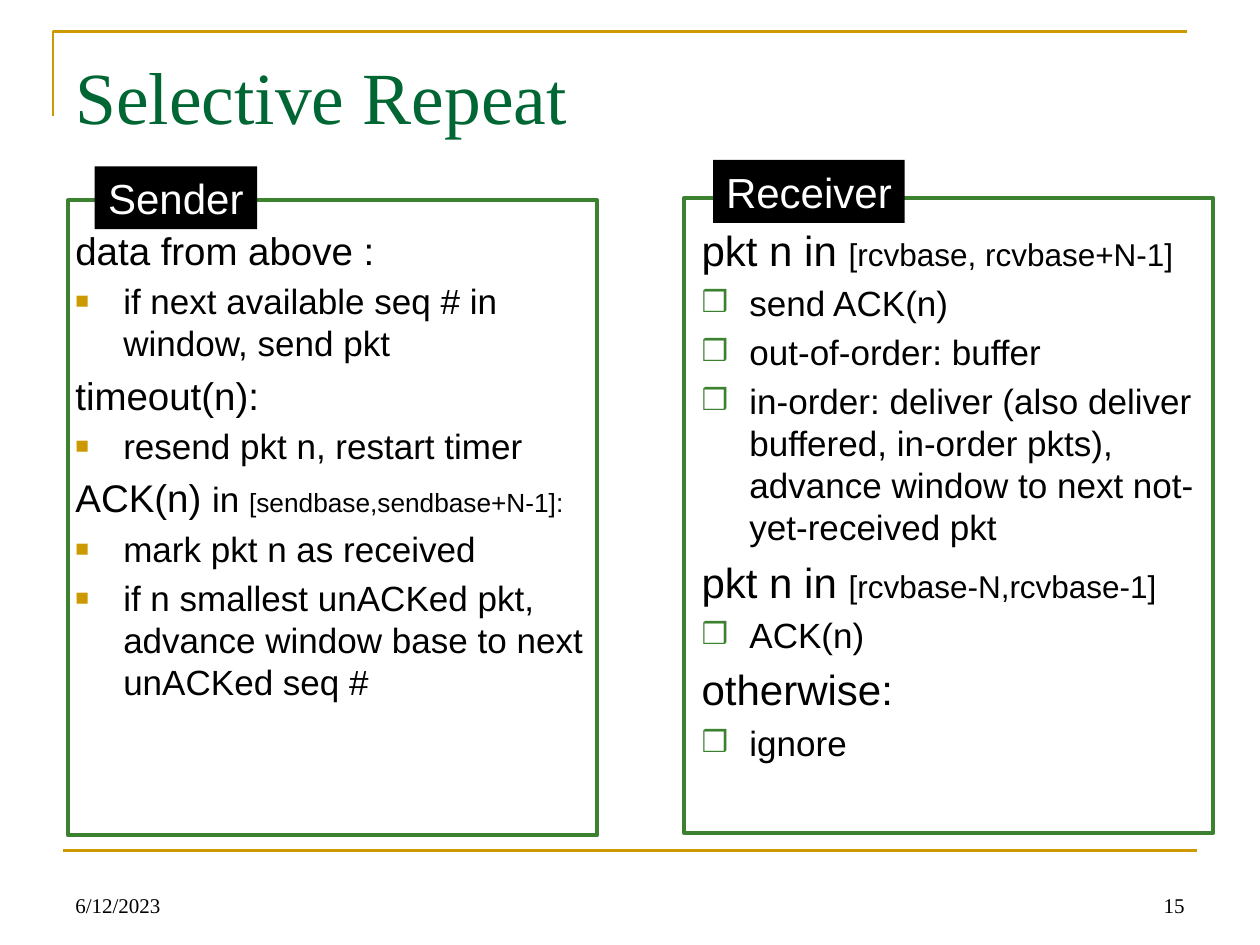
"""Build the Selective Repeat slide comparing sender and receiver rules."""
from dataclasses import dataclass

import pptx
import pptx.dml.color
import pptx.enum.shapes
import pptx.enum.text
import pptx.oxml
import pptx.oxml.ns
import pptx.util
from lxml import etree

Inches = pptx.util.Inches
Align = pptx.enum.text.PP_ALIGN
Anchor = pptx.enum.text.MSO_ANCHOR
Kind = pptx.enum.shapes.MSO_SHAPE
qn = pptx.oxml.ns.qn


@dataclass(frozen=True)
class Theme:
    """Colours, fonts and type sizes of the slide."""
    gold: str = "CC9900"
    title_green: str = "006633"
    frame_green: str = "3B812F"
    black: str = "000000"
    white: str = "FFFFFF"
    sans: str = "Arial"
    serif: str = "Times New Roman"
    title: int = 42
    label: int = 24
    item: int = 20
    footer: int = 12
    rule: float = 1.5
    frame: float = 2.25


@dataclass(frozen=True)
class Box:
    """Position and size in inches."""
    left: float
    top: float
    width: float
    height: float

    def emu(self) -> tuple:
        """Return the four lengths for a python-pptx call."""
        return tuple(Inches(v) for v in (self.left, self.top, self.width, self.height))


@dataclass(frozen=True)
class Run:
    """A piece of text with its type size."""
    text: str
    size: int


@dataclass(frozen=True)
class Bullet:
    """A bullet character with its colour and percentage size."""
    char: str
    color: str
    percent: int


@dataclass(frozen=True)
class Panel:
    """A framed list with a label; a string is a bulleted item, a tuple a heading."""
    label: str
    label_box: Box
    frame: Box
    body: Box
    bullet: Bullet
    lines: tuple


THEME = Theme()
PANELS = (
    Panel(
        "Sender", Box(0.75, 1.32, 1.29, 0.5), Box(0.54, 1.59, 4.2, 5.04),
        Box(0.5, 1.75, 4.42, 4.95), Bullet("■", THEME.gold, 65),
        (
            (Run("data from above :", 22),),
            "if next available seq # in window, send pkt",
            (Run("timeout(n):", 22),),
            "resend pkt n, restart timer",
            (Run("ACK(n) ", 22), Run("in ", 20), Run("[sendbase,sendbase+N-1]:", 15)),
            "mark pkt n as received",
            "if n smallest unACKed pkt, advance window base to next unACKed seq #",
        ),
    ),
    Panel(
        "Receiver", Box(5.66, 1.27, 1.52, 0.5), Box(5.43, 1.57, 4.2, 5.04),
        Box(5.47, 1.73, 4.17, 5.08), Bullet("❒", THEME.frame_green, 85),
        (
            (Run("pkt n in ", 24), Run("[rcvbase, rcvbase+N-1]", 18)),
            "send ACK(n)",
            "out-of-order: buffer",
            "in-order: deliver (also deliver buffered, in-order pkts), "
            "advance window to next not-yet-received pkt",
            (Run("pkt n in ", 24), Run("[rcvbase-N,rcvbase-1]", 18)),
            "ACK(n)",
            (Run("otherwise:", 24),),
            "ignore",
        ),
    ),
)


def rgb(color: str) -> pptx.dml.color.RGBColor:
    """Turn a hex string into a colour."""
    return pptx.dml.color.RGBColor.from_string(color)


def add_run(p, run: Run, color: str, font: str) -> None:
    """Append one formatted run to a paragraph."""
    r = p.add_run()
    r.text = run.text
    r.font.size = pptx.util.Pt(run.size)
    r.font.name = font
    r.font.color.rgb = rgb(color)


def set_line(sp, color: str, width: float) -> None:
    """Colour and size the line of a shape or connector."""
    sp.line.color.rgb = rgb(color)
    sp.line.width = pptx.util.Pt(width)


def add_text(s, box: Box, run: Run, color: str, font: str, anchor: Anchor, align: Align) -> None:
    """Add a one-run text box."""
    tf = s.shapes.add_textbox(*box.emu()).text_frame
    tf.word_wrap = True
    tf.vertical_anchor = anchor
    p = tf.paragraphs[0]
    p.alignment = align
    add_run(p, run, color, font)


def format_paragraph(p, bullet: Bullet | None) -> None:
    """Set the hanging indent, proportional spacing and optional bullet."""
    ppr = p._p.get_or_add_pPr()
    ppr.set("marL", str(Inches(0.38)))
    ppr.set("indent", str(-Inches(0.38)))
    before = etree.SubElement(ppr, qn("a:spcBef"))
    etree.SubElement(before, qn("a:spcPct"), val="20000")
    if bullet is None:
        etree.SubElement(ppr, qn("a:buNone"))
        return
    color = etree.SubElement(ppr, qn("a:buClr"))
    etree.SubElement(color, qn("a:srgbClr"), val=bullet.color)
    etree.SubElement(ppr, qn("a:buSzPct"), val=str(bullet.percent * 1000))
    etree.SubElement(ppr, qn("a:buFont"), typeface=THEME.sans)
    etree.SubElement(ppr, qn("a:buChar"), char=bullet.char)


def add_rules(s) -> None:
    """Draw the corner rule at the top and the straight rule at the bottom."""
    fb = s.shapes.build_freeform(Inches(0.42), Inches(0.92))
    fb.add_line_segments([(Inches(0.42), Inches(0.25)), (Inches(9.42), Inches(0.25))], close=False)
    corner = fb.convert_to_shape()
    corner.shadow.inherit = False
    corner.fill.background()
    set_line(corner, THEME.gold, THEME.rule)
    rule = s.shapes.add_connector(
        pptx.enum.shapes.MSO_CONNECTOR.STRAIGHT, Inches(0.5), Inches(6.75), Inches(9.5), Inches(6.75))
    set_line(rule, THEME.gold, THEME.rule)
    etree.SubElement(rule._element.spPr, qn("a:effectLst"))


def add_panel(s, panel: Panel) -> None:
    """Draw one list with its frame and label."""
    tf = s.shapes.add_textbox(*panel.body.emu()).text_frame
    tf.word_wrap = True
    for i, line in enumerate(panel.lines):
        p = tf.add_paragraph() if i else tf.paragraphs[0]
        is_item = isinstance(line, str)
        format_paragraph(p, panel.bullet if is_item else None)
        for run in (Run(line, THEME.item),) if is_item else line:
            add_run(p, run, THEME.black, THEME.sans)

    frame = s.shapes.add_shape(Kind.RECTANGLE, *panel.frame.emu())
    frame.shadow.inherit = False
    frame.fill.background()
    set_line(frame, THEME.frame_green, THEME.frame)

    label = s.shapes.add_shape(Kind.RECTANGLE, *panel.label_box.emu())
    label.shadow.inherit = False
    label.fill.solid()
    label.fill.fore_color.rgb = rgb(THEME.black)
    label.line.fill.background()
    tf = label.text_frame
    tf.word_wrap = False
    tf.vertical_anchor = Anchor.TOP
    p = tf.paragraphs[0]
    p.alignment = Align.CENTER
    add_run(p, Run(panel.label, THEME.label), THEME.white, THEME.sans)


def main() -> None:
    """Build and save the slide."""
    prs = pptx.Presentation()
    prs.slide_width, prs.slide_height = Inches(10), Inches(7.5)
    s = prs.slides.add_slide(prs.slide_layouts[6])
    add_rules(s)
    add_text(s, Box(0.5, 0.3, 8.5, 0.91), Run("Selective Repeat", THEME.title),
             THEME.title_green, THEME.serif, Anchor.MIDDLE, Align.LEFT)
    for panel in PANELS:
        add_panel(s, panel)
    for left, text, align in ((0.5, "6/12/2023", Align.LEFT), (7.17, "15", Align.RIGHT)):
        add_text(s, Box(left, 6.83, 2.33, 0.5), Run(text, THEME.footer),
                 THEME.black, THEME.serif, Anchor.BOTTOM, align)
    prs.save("out.pptx")


if __name__ == "__main__":
    main()
